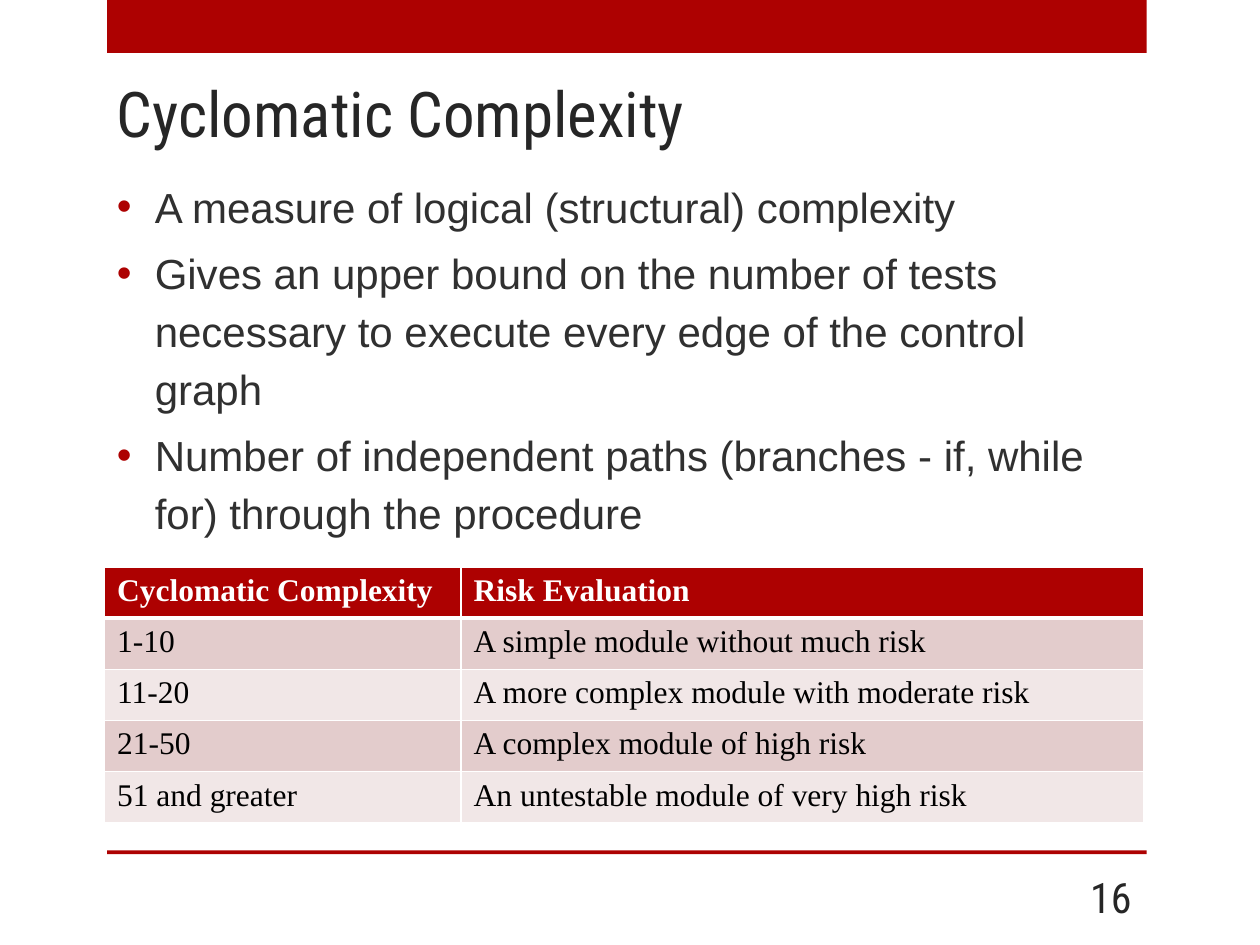
import pptx
import pptx.util
import pptx.dml.color
import pptx.enum.shapes
import pptx.enum.text
import pptx.oxml
import pptx.oxml.ns
import lxml.etree

Inches = pptx.util.Inches
Pt = pptx.util.Pt
RGBColor = pptx.dml.color.RGBColor
ALIGN = pptx.enum.text.PP_ALIGN
ANCHOR = pptx.enum.text.MSO_ANCHOR

RED = RGBColor(0xAD, 0x01, 0x01)
INK = RGBColor(0x26, 0x26, 0x26)
BODY_GREY = RGBColor(0x30, 0x30, 0x30)
WHITE = RGBColor(0xFF, 0xFF, 0xFF)
BLACK = RGBColor(0x00, 0x00, 0x00)
BANDS = (RGBColor(0xE3, 0xCC, 0xCC), RGBColor(0xF1, 0xE7, 0xE7))

HEADING_FONT = "Roboto Condensed"
BULLETS = (
    "A measure of logical (structural) complexity",
    "Gives an upper bound on the number of tests necessary to execute "
    "every edge of the control graph",
    "Number of independent paths (branches - if, while for) through the procedure",
)
RISK_ROWS = (
    ("Cyclomatic Complexity", "Risk Evaluation"),
    ("1-10", "A simple module without much risk"),
    ("11-20", "A more complex module with moderate risk"),
    ("21-50", "A complex module of high risk"),
    ("51 and greater", "An untestable module of very high risk"),
)


def write(para, text, font="Arial", size=24, color=INK, bold=False, align=ALIGN.LEFT):
    para.alignment = align
    span = para.add_run()
    span.text = text
    span.font.name = font
    span.font.size = Pt(size)
    span.font.bold = bold
    span.font.color.rgb = color


def add_frame(page, box, anchor=ANCHOR.TOP):
    frame = page.shapes.add_textbox(*box).text_frame
    frame.word_wrap = True
    frame.vertical_anchor = anchor
    return frame


def add_bullet(para, indent):
    properties = para._p.get_or_add_pPr()
    properties.set("marL", str(indent))
    properties.set("indent", str(-indent))
    color = lxml.etree.SubElement(properties, pptx.oxml.ns.qn("a:buClr"))
    lxml.etree.SubElement(color, pptx.oxml.ns.qn("a:srgbClr"), val=str(RED))
    lxml.etree.SubElement(properties, pptx.oxml.ns.qn("a:buFont"), typeface="Arial")
    lxml.etree.SubElement(properties, pptx.oxml.ns.qn("a:buChar"), char="•")


def set_borders(cell, bottom_width):
    properties = cell._tc.get_or_add_tcPr()
    widths = {"a:lnL": 1, "a:lnR": 1, "a:lnT": 1, "a:lnB": bottom_width}
    for position, (tag, width) in enumerate(widths.items()):
        line = lxml.etree.Element(pptx.oxml.ns.qn(tag), w=str(Pt(width)))
        fill = lxml.etree.SubElement(line, pptx.oxml.ns.qn("a:solidFill"))
        lxml.etree.SubElement(fill, pptx.oxml.ns.qn("a:srgbClr"), val=str(WHITE))
        properties.insert(position, line)


def add_bar(page, box):
    bar = page.shapes.add_shape(pptx.enum.shapes.MSO_SHAPE.RECTANGLE, *box)
    bar.shadow.inherit = False
    bar.fill.solid()
    bar.fill.fore_color.rgb = RED
    bar.line.fill.background()


def add_title(page, box):
    frame = add_frame(page, box, ANCHOR.MIDDLE)
    write(frame.paragraphs[0], "Cyclomatic Complexity", font=HEADING_FONT, size=36)


def add_bullets(page, box):
    frame = add_frame(page, box)
    for number, text in enumerate(BULLETS):
        para = frame.add_paragraph() if number else frame.paragraphs[0]
        para.line_spacing = 1.15
        para.space_before = Pt(4.8)
        add_bullet(para, Inches(0.3))
        write(para, text, color=BODY_GREY)


def add_risk_table(page, box):
    table = page.shapes.add_table(len(RISK_ROWS), 2, *box).table
    table.columns[0].width = Inches(2.83)
    table.columns[1].width = box[2] - Inches(2.83)
    for row, texts in enumerate(RISK_ROWS):
        header = row == 0
        for column, text in enumerate(texts):
            cell = table.cell(row, column)
            cell.fill.solid()
            cell.fill.fore_color.rgb = RED if header else BANDS[(row - 1) % 2]
            set_borders(cell, 3 if header else 1)
            write(cell.text_frame.paragraphs[0], text, font="Times New Roman",
                  size=18, color=WHITE if header else BLACK, bold=header)


def add_page_number(page, box):
    frame = add_frame(page, box, ANCHOR.MIDDLE)
    write(frame.paragraphs[0], "16", font=HEADING_FONT, align=ALIGN.RIGHT)


def main():
    deck = pptx.Presentation()
    deck.slide_width, deck.slide_height = Inches(10), Inches(7.5)
    page = deck.slides.add_slide(deck.slide_layouts[6])
    left, width = Inches(0.83), Inches(8.25)

    # Bands at the top and bottom
    add_bar(page, (Inches(0.85), 0, width, Inches(0.42)))
    add_bar(page, (Inches(0.85), Inches(6.75), width, Inches(0.03)))

    # Content
    add_title(page, (left, Inches(0.53), width, Inches(0.72)))
    add_bullets(page, (left, Inches(1.33), width, Inches(5.33)))
    add_page_number(page, (Inches(8.25), Inches(6.92), Inches(0.83), Inches(0.4)))
    add_risk_table(page, (left, Inches(4.5), width, Inches(2.03)))

    deck.save("out.pptx")


if __name__ == "__main__":
    main()
